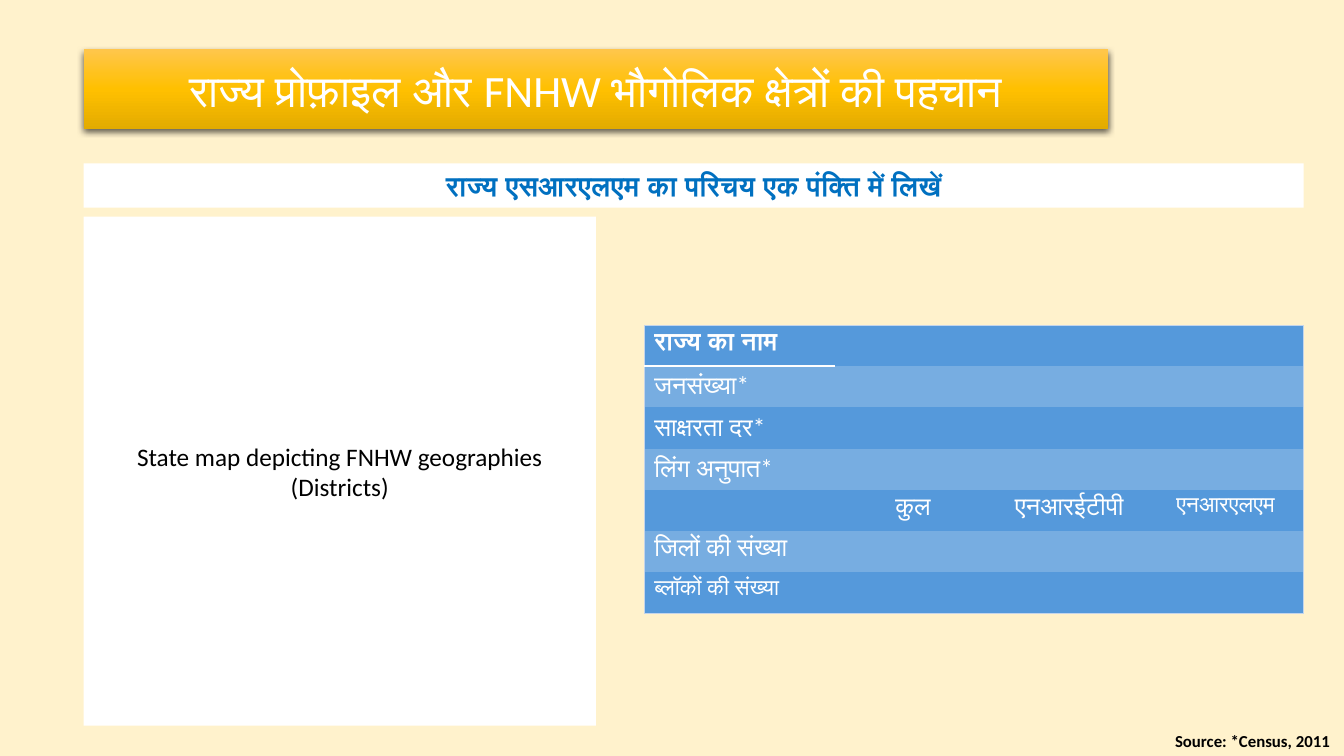
from pptx import Presentation
from pptx.util import Inches, Pt
from pptx.dml.color import RGBColor as Rgb
from pptx.enum.shapes import MSO_SHAPE as Kind
from pptx.enum.text import PP_ALIGN as Align, MSO_ANCHOR as Anchor, MSO_AUTO_SIZE as Auto
from pptx.oxml import parse_xml
from pptx.oxml.ns import nsdecls

THEME = {
    "font": "Calibri",
    "page": "FFF2CC", "white": "FFFFFF", "black": "000000", "blue": "0070C0",
    "dark": "5599DB", "light": "77ADE1", "edge": "C4D5EB",
    "gold": [(0, "FFC64B"), (50, "FFC000"), (100, "E3AB00")],
    "title": 32, "intro": 20, "body": 18, "small": 16, "note": 12,
}
TITLE = "राज्य प्रोफ़ाइल और FNHW भौगोलिक क्षेत्रों की पहचान"
INTRO = "राज्य एसआरएलएम का परिचय एक पंक्ति में लिखें"
MAP = "State map depicting FNHW geographies (Districts)"
NOTE = "Source: *Census, 2011"
ROWS = [
    ["राज्य का नाम"],
    ["जनसंख्या*"],
    ["साक्षरता दर*"],
    ["लिंग अनुपात*"],
    ["", "कुल", "एनआरईटीपी", "एनआरएलएम"],
    ["जिलों की संख्या", "", "", ""],
    ["ब्लॉकों की संख्या", "", "", ""],
]
SMALL = {"एनआरएलएम", "ब्लॉकों की संख्या"}
COLS = [1.89, 1.55, 1.55, 1.55]
HEADS = [0.39] + [0.41] * 6


def color(name):
    return Rgb.from_string(THEME[name])


def write(frame, text, size, tone, align, bold=False):
    frame.text = text
    para = frame.paragraphs[0]
    para.alignment = align
    for run in para.runs:
        font = run.font
        font.name, font.size, font.bold = THEME["font"], Pt(THEME[size]), bold
        font.color.rgb = color(tone)


def panel(slide, box, text, size, tone, anchor=Anchor.MIDDLE, bold=False):
    shape = slide.shapes.add_shape(Kind.RECTANGLE, *map(Inches, box))
    shape.shadow.inherit = False
    shape.fill.solid()
    shape.fill.fore_color.rgb = color("white")
    shape.line.fill.background()
    shape.text_frame.vertical_anchor = anchor
    write(shape.text_frame, text, size, tone, Align.CENTER, bold)
    return shape


def gild(shape):
    shape.fill.gradient()
    shape.fill.gradient_angle = 270
    props = shape._element.spPr
    stops = props.find(".//{*}gsLst")
    for stop in list(stops):
        stops.remove(stop)
    for place, tone in THEME["gold"]:
        stops.append(parse_xml(
            f'<a:gs {nsdecls("a")} pos="{place * 1000}"><a:srgbClr val="{tone}"/></a:gs>'))
    props.find("{*}effectLst").append(parse_xml(
        f'<a:outerShdw {nsdecls("a")} blurRad="{Pt(4.5)}" dist="{Pt(1.5)}" dir="5400000" '
        f'algn="ctr" rotWithShape="0"><a:srgbClr val="{THEME["black"]}">'
        '<a:alpha val="63000"/></a:srgbClr></a:outerShdw>'))


def border(cell, lines):
    props = cell._tc.get_or_add_tcPr()
    for spot, (side, tone, width) in enumerate(lines):
        props.insert(spot, parse_xml(
            f'<a:ln{side} {nsdecls("a")} w="{Pt(width)}"><a:solidFill>'
            f'<a:srgbClr val="{THEME[tone]}"/></a:solidFill></a:ln{side}>'))


def build_grid(slide):
    box = map(Inches, (6.39, 3.23, sum(COLS), sum(HEADS)))
    grid = slide.shapes.add_table(len(ROWS), len(COLS), *box).table
    grid._tbl.tblPr[0].text = "{2D5ABB26-0587-4C30-8999-92F81FD0307C}"
    grid.first_row = grid.horz_banding = False
    for col, width in zip(grid.columns, COLS):
        col.width = Inches(width)
    for row, height in zip(grid.rows, HEADS):
        row.height = Inches(height)
    last = len(COLS) - 1
    for r, words in enumerate(ROWS):
        merged = len(words) == 1
        if merged:
            grid.cell(r, 1).merge(grid.cell(r, last))
        for c in range(len(COLS)):
            cell = grid.cell(r, c)
            cell.fill.solid()
            cell.fill.fore_color.rgb = color("light" if r % 2 else "dark")
            lines = []
            if c == 0:
                lines.append(("L", "edge", 0.5))
            if c == last or merged and c == 1:
                lines.append(("R", "edge", 0.5))
            if r == 0:
                lines.append(("T", "edge", 0.5))
            if r == c == 0:
                lines.append(("B", "white", 1.5))
            if r == len(ROWS) - 1:
                lines.append(("B", "edge", 0.5))
            border(cell, lines)
            if c < len(words) and words[c]:
                size = "small" if words[c] in SMALL else "body"
                align = Align.CENTER if c else Align.LEFT
                write(cell.text_frame, words[c], size, "white", align, r == 0)


def main():
    deck = Presentation()
    deck.slide_width, deck.slide_height = Inches(13.33), Inches(7.5)
    slide = deck.slides.add_slide(deck.slide_layouts[6])
    slide.background.fill.solid()
    slide.background.fill.fore_color.rgb = color("page")

    panel(slide, (0.83, 2.15, 5.08, 5.05), MAP, "body", "black")
    intro = panel(slide, (0.83, 1.62, 12.1, 0.44), INTRO, "intro", "blue", Anchor.TOP, True)
    intro.text_frame.auto_size = Auto.SHAPE_TO_FIT_TEXT
    build_grid(slide)
    note = slide.shapes.add_textbox(*map(Inches, (11.29, 7.2, 2, 0.3))).text_frame
    note.word_wrap = True
    note.auto_size = Auto.SHAPE_TO_FIT_TEXT
    write(note, NOTE, "note", "black", Align.RIGHT, True)
    gild(panel(slide, (0.83, 0.49, 10.16, 0.79), TITLE, "title", "white"))
    deck.save("out.pptx")


if __name__ == "__main__":
    main()
